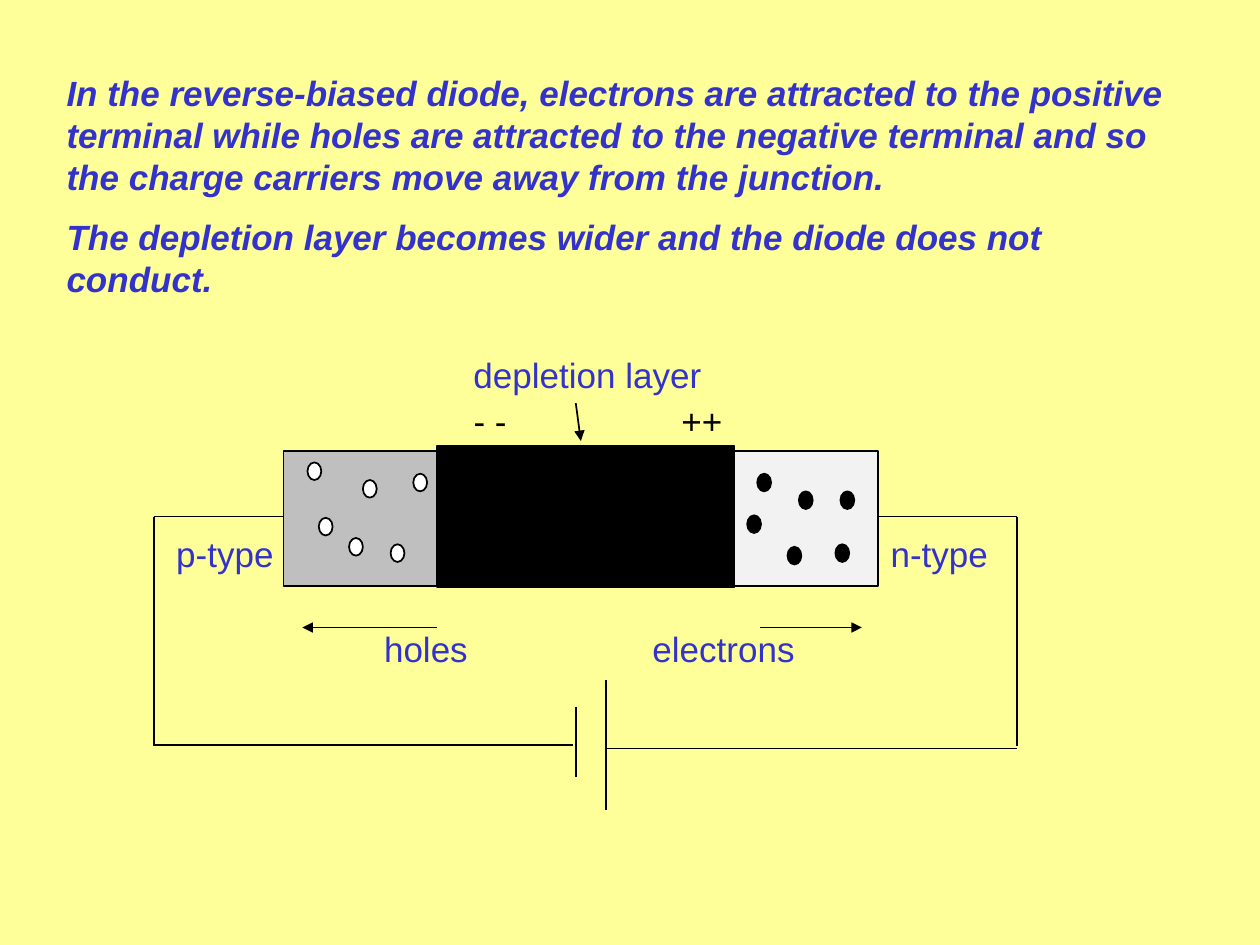
import dataclasses

import lxml.etree
import pptx
import pptx.dml.color
import pptx.enum.shapes
import pptx.enum.text
import pptx.oxml.ns
import pptx.util

Inches = pptx.util.Inches
Pt = pptx.util.Pt
SHAPES = pptx.enum.shapes.MSO_SHAPE


def color(code):
    return pptx.dml.color.RGBColor.from_string(code)


@dataclasses.dataclass(frozen=True)
class Theme:
    background: str = "FFFF99"
    accent: str = "3333CC"
    ink: str = "000000"
    p_side: str = "BFBFBF"
    n_side: str = "F2F2F2"
    hole: str = "FFFFFF"
    font: str = "Arial"
    text_size: int = 20
    paragraph_gap: int = 10
    line_width: int = 1


@dataclasses.dataclass(frozen=True)
class Box:
    left: float
    top: float
    width: float
    height: float

    def inner(self, left, top, width, height):
        return Box(self.left + left, self.top + top, width, height)

    def lengths(self):
        return [Inches(value) for value in (self.left, self.top, self.width, self.height)]


THEME = Theme()


def add_text(page, box, paragraphs, code=THEME.accent, **extra):
    frame = page.shapes.add_textbox(*box.lengths()).text_frame
    frame.word_wrap = True
    frame.auto_size = pptx.enum.text.MSO_AUTO_SIZE.SHAPE_TO_FIT_TEXT
    font_format = {"name": THEME.font, "size": Pt(THEME.text_size), **extra}
    for index, text in enumerate(paragraphs):
        para = frame.add_paragraph() if index else frame.paragraphs[0]
        para.space_before = Pt(THEME.paragraph_gap)
        span = para.add_run()
        span.text = text
        span.font.color.rgb = color(code)
        for name, value in font_format.items():
            setattr(span.font, name, value)


def add_solid(page, kind, box, fill):
    shape = page.shapes.add_shape(kind, *box.lengths())
    shape.shadow.inherit = False
    shape.fill.solid()
    shape.fill.fore_color.rgb = color(fill)
    shape.line.color.rgb = color(THEME.ink)
    shape.line.width = Pt(THEME.line_width)


def add_line(page, box, start, end, arrow=False):
    points = [Inches(base + shift) for point in (start, end)
              for base, shift in zip((box.left, box.top), point)]
    line = page.shapes.add_connector(pptx.enum.shapes.MSO_CONNECTOR.STRAIGHT, *points)
    line.line.color.rgb = color(THEME.ink)
    line.line.width = Pt(THEME.line_width)
    qualified = pptx.oxml.ns.qn
    if arrow:
        lxml.etree.SubElement(line.line._get_or_add_ln(), qualified("a:tailEnd"), type="triangle")
    lxml.etree.SubElement(line._element.spPr, qualified("a:effectLst"))


def add_explanation(page, box):
    add_text(page, box, [
        "In the reverse-biased diode, electrons are attracted to the positive terminal "
        "while holes are attracted to the negative terminal and so the charge carriers "
        "move away from the junction.",
        "The depletion layer becomes wider and the diode does not conduct.",
    ], bold=True, italic=True)


def add_circuit(page, box):
    wire_top, wire_left, wire_right = 1.34, 0, box.width
    short_plate, long_plate = 3.35, 3.59
    wires = [
        ((wire_left, wire_top), (1.03, wire_top)),
        ((5.75, wire_top), (wire_right, wire_top)),
        ((wire_left, wire_top), (wire_left, 3.16)),
        ((wire_left, 3.15), (3.33, 3.15)),
        ((short_plate, 2.85), (short_plate, 3.41)),
        ((long_plate, 2.64), (long_plate, box.height)),
        ((long_plate, 3.18), (wire_right, 3.18)),
        ((wire_right, wire_top), (wire_right, 3.16)),
    ]
    for start, end in wires:
        add_line(page, box, start, end)


def add_carriers(page, box, fill, spots):
    for left, top in spots:
        add_solid(page, SHAPES.OVAL, box.inner(left, top, 0.11, 0.14), fill)


def add_diode(page, box):
    half = box.width / 2
    p_box = box.inner(0, 0, half, box.height)
    n_box = box.inner(half, 0, half, box.height)
    add_solid(page, SHAPES.RECTANGLE, p_box, THEME.p_side)
    add_solid(page, SHAPES.RECTANGLE, n_box, THEME.n_side)
    add_carriers(page, p_box, THEME.hole, [
        (0.63, 0.23), (0.85, 0.74), (1.03, 0.18), (0.52, 0.69), (0.28, 0.53), (0.19, 0.09)])
    add_carriers(page, n_box, THEME.ink, [
        (1.73, 0.32), (1.32, 0.51), (2.02, 0.74), (1.4, 0.18), (2.06, 0.32), (1.64, 0.76)])
    add_solid(page, SHAPES.RECTANGLE, box.inner(1.22, -0.04, half, 1.12), THEME.ink)


def add_labels(page, box):
    labels = [
        ("depletion layer", 2.44, 0, 2.13, THEME.accent),
        ("++", 4.09, 0.36, 0.71, THEME.ink),
        ("- -", 2.44, 0.36, 0.71, THEME.ink),
        ("p-type", 0.08, 1.42, 1.1, THEME.accent),
        ("n-type", 5.75, 1.42, 1.1, THEME.accent),
        ("holes", 1.73, 2.17, 1.34, THEME.accent),
        ("electrons", 3.86, 2.17, 1.34, THEME.accent),
    ]
    for text, left, top, width, code in labels:
        add_text(page, box.inner(left, top, width, 0.43), [text], code)
    arrows = [
        ((3.35, 0.44), (3.39, 0.74)),
        ((2.25, 2.22), (1.18, 2.22)),
        ((4.81, 2.22), (5.62, 2.22)),
    ]
    for start, end in arrows:
        add_line(page, box, start, end, arrow=True)


def main():
    deck = pptx.Presentation()
    deck.slide_width, deck.slide_height = Inches(10), Inches(7.5)
    page = deck.slides.add_slide(deck.slide_layouts.get_by_name("Blank"))
    page.background.fill.solid()
    page.background.fill.fore_color.rgb = color(THEME.background)
    diagram = Box(1.22, 2.76, 6.85, 3.67)
    add_explanation(page, Box(0.43, 0.52, 9.06, 1.93))
    add_circuit(page, diagram)
    add_diode(page, diagram.inner(1.03, 0.82, 4.72, 1.07))
    add_labels(page, diagram)
    deck.save("out.pptx")


if __name__ == "__main__":
    main()
